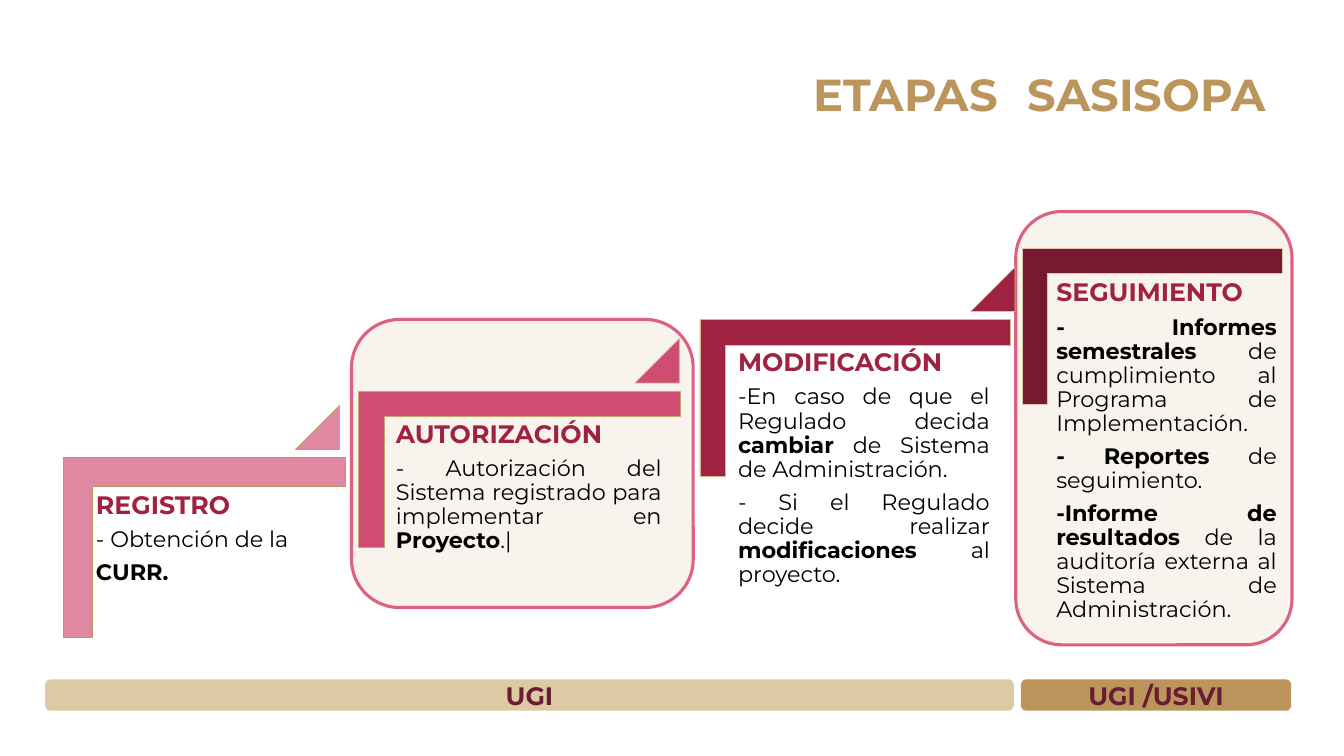
"""Build the slide with the four stages of the SASISOPA as a rising staircase."""
from pptx import Presentation
from pptx.dml.color import RGBColor
from pptx.enum.shapes import MSO_SHAPE
from pptx.enum.text import MSO_ANCHOR, PP_ALIGN
from pptx.util import Cm, Pt

COLORS = {
    "gold": "BC955C", "sand": "DDC9A3", "cream": "F8F4ED", "frame": "DD6281",
    "wine": "691C32", "heading": "9F2241", "black": "000000",
    "step 1": "DF88A1", "step 2": "CF4C72", "step 3": "9F2241", "step 4": "771931",
    "bracket 2": "C7A773", "bracket 3": "D2B88B",
    "triangle 1": "C29E68", "triangle 2": "CDB07F", "triangle 3": "D8C197",
}

STAGES = [
    {"bracket": (1.6, 11.53, 7.11, 4.52), "text": (2.24, 12.24, 7.14, 5.28),
     "triangle": (7.44, 10.21), "line": "gold",
     "align": PP_ALIGN.LEFT, "heading": "REGISTRO",
     "body": ["- Obtención de la", "*CURR.*"]},
    {"bracket": (9.04, 9.86, 8.1, 3.94), "text": (9.8, 10.44, 7.06, 5.18),
     "triangle": (16, 8.53), "line": "bracket 2",
     "align": PP_ALIGN.JUSTIFY, "heading": "AUTORIZACIÓN",
     "body": ["- Autorización del Sistema registrado para implementar en *Proyecto*.|"]},
    {"bracket": (17.64, 8.06, 7.82, 3.94), "text": (18.42, 8.64, 6.71, 5.18),
     "triangle": (24.46, 6.73), "line": "bracket 3",
     "align": PP_ALIGN.JUSTIFY, "heading": "MODIFICACIÓN",
     "body": ["-En caso de que el Regulado decida *cambiar* de Sistema de Administración.",
              "- Si el Regulado decide realizar *modificaciones* al proyecto."]},
    {"bracket": (25.77, 6.26, 6.55, 3.94), "text": (26.44, 6.88, 5.92, 5.18),
     "triangle": None, "line": "sand",
     "align": PP_ALIGN.JUSTIFY, "heading": "SEGUIMIENTO",
     "body": ["*- Informes semestrales* de cumplimiento al Programa de Implementación.",
              "*- Reportes* de seguimiento.",
              "*-Informe de resultados* de la auditoría externa al Sistema de Administración."]},
]


def write(paragraph, text, size=16, color="black", align=PP_ALIGN.CENTER,
          spacing=None, after=None):
    paragraph.alignment = align
    paragraph.line_spacing = spacing
    paragraph.space_after = after
    for position, part in enumerate(text.split("*")):
        if part:
            run = paragraph.add_run()
            run.text = part
            run.font.name = "Montserrat"
            run.font.size = Pt(size)
            run.font.bold = position % 2 == 1
            run.font.color.rgb = RGBColor.from_string(COLORS[color])


class StageSlide:
    def __init__(self, presentation):
        self.slide = presentation.slides.add_slide(presentation.slide_layouts[6])
        self.inset = Cm(0.18)

    def shape(self, kind, box, fill, line=None, width=0.5):
        shape = self.slide.shapes.add_shape(kind, *map(Cm, box))
        shape.shadow.inherit = False
        shape.fill.solid()
        shape.fill.fore_color.rgb = RGBColor.from_string(COLORS[fill])
        if line:
            shape.line.color.rgb = RGBColor.from_string(COLORS[line])
            shape.line.width = Pt(width)
        else:
            shape.line.fill.background()
        return shape

    def title(self, text, box):
        frame = self.slide.shapes.add_textbox(*map(Cm, box)).text_frame
        frame.word_wrap = True
        write(frame.paragraphs[0], f"*{text}*", size=32, color="gold")

    def frame(self, box):
        self.shape(MSO_SHAPE.ROUNDED_RECTANGLE, box, "cream", "frame", 2.25)

    def bracket(self, box, fill, line):
        left, top, width, height = box
        shift = (width - height) / 2
        turned = (left + shift, top - shift, height, width)
        shape = self.shape(MSO_SHAPE.CORNER, turned, fill, line)
        shape.rotation = 90
        shape.adjustments[0] = shape.adjustments[1] = 0.161

    def triangle(self, corner, fill, line):
        shape = self.shape(MSO_SHAPE.ISOSCELES_TRIANGLE, (*corner, 1.12, 1.12), fill, line)
        shape.adjustments[0] = 1

    def stage_text(self, box, heading, body, align):
        frame = self.slide.shapes.add_textbox(*map(Cm, box)).text_frame
        frame.word_wrap = True
        frame.margin_left = frame.margin_right = self.inset
        frame.margin_top = frame.margin_bottom = self.inset
        layout = {"align": align, "spacing": 0.9, "after": Pt(6)}
        write(frame.paragraphs[0], f"*{heading}*", size=18, color="heading", **layout)
        for text in body:
            write(frame.add_paragraph(), text, **layout)

    def bar(self, text, box, fill):
        frame = self.shape(MSO_SHAPE.ROUNDED_RECTANGLE, box, fill).text_frame
        frame.vertical_anchor = MSO_ANCHOR.MIDDLE
        write(frame.paragraphs[0], f"*{text}*", size=18, color="wine")


def main():
    presentation = Presentation()
    presentation.slide_width = Cm(33.87)
    presentation.slide_height = Cm(19.05)
    page = StageSlide(presentation)
    page.title("ETAPAS\t SASISOPA", (19.2, 1.55, 14, 1.63))
    page.frame((8.86, 8.05, 8.61, 7.26))
    page.frame((25.6, 5.33, 6.96, 10.92))
    for number, stage in enumerate(STAGES, start=1):
        page.bracket(stage["bracket"], f"step {number}", stage["line"])
        page.stage_text(stage["text"], stage["heading"], stage["body"], stage["align"])
        if stage["triangle"]:
            page.triangle(stage["triangle"], f"step {number}", f"triangle {number}")
    page.bar("UGI", (1.14, 17.12, 24.41, 0.79), "sand")
    page.bar("UGI /USIVI", (25.73, 17.12, 6.81, 0.79), "gold")
    presentation.save("out.pptx")


if __name__ == "__main__":
    main()
